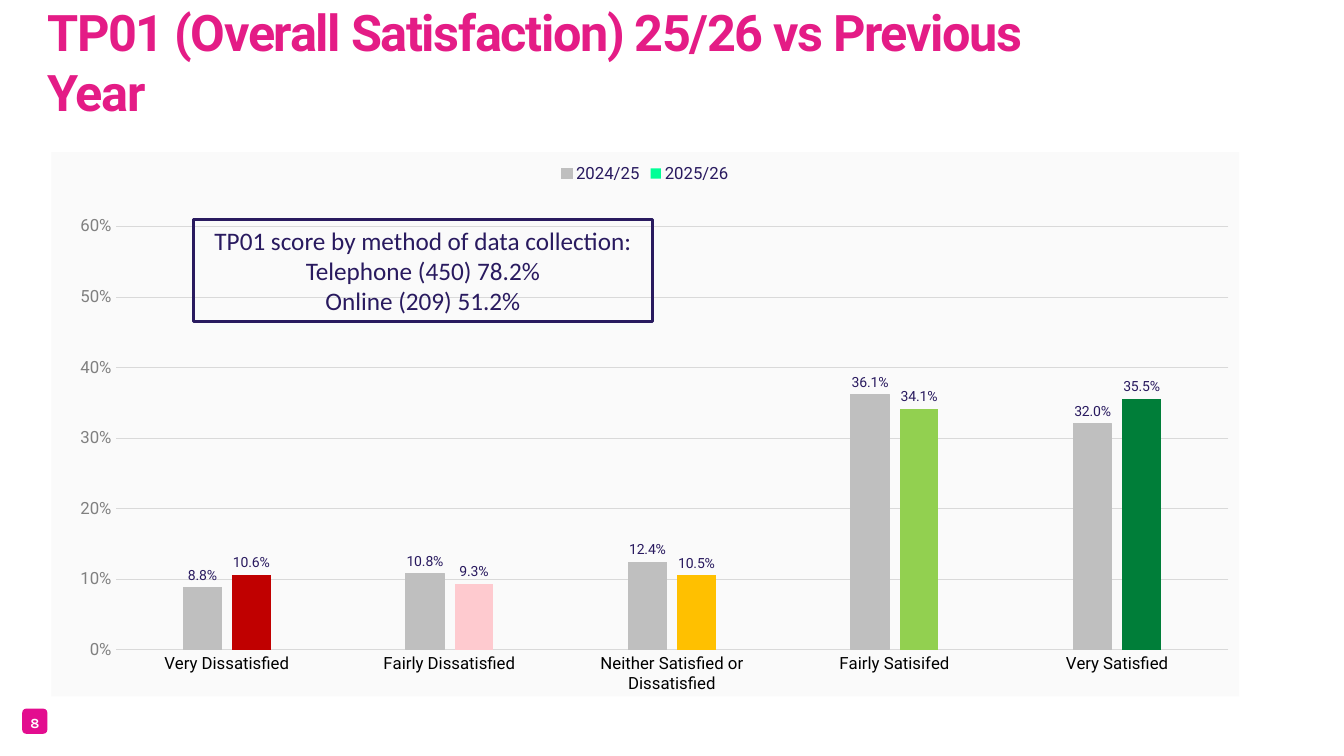
import pptx
import pptx.util
import pptx.chart.data
import pptx.dml.color
import pptx.enum.chart
import pptx.enum.shapes
import pptx.enum.text
import pptx.oxml
import pptx.oxml.ns

PX = 9144
NAVY = "291A5F"
GREY = "BFBFBF"
PINK = "E30D8F"
CATEGORIES = ["Very Dissatisfied", "Fairly Dissatisfied", "Neither Satisfied or Dissatisfied",
              "Fairly Satisifed", "Very Satisfied"]
LAST_YEAR = [0.088, 0.108, 0.124, 0.361, 0.32]
THIS_YEAR = [0.106, 0.093, 0.105, 0.341, 0.355]
ANSWER_COLOURS = ["C00000", "FECACF", "FFC000", "92D050", "007E39"]
PLOT_FRAME = {"x": 0.054, "y": 0.136, "w": 0.937, "h": 0.778}
ALIGN = pptx.enum.text.PP_ALIGN
SHAPES = pptx.enum.shapes.MSO_SHAPE
POSITION = pptx.enum.chart


def px(*lengths):
    return [pptx.util.Emu(length * PX) for length in lengths]


def colour(value):
    return pptx.dml.color.RGBColor.from_string(value)


def paint(fill, value):
    fill.solid()
    fill.fore_color.rgb = colour(value)


def style_font(font, size, value, name="Roboto", bold=False):
    font.size = pptx.util.Pt(size)
    font.name = name
    font.bold = bold
    font.color.rgb = colour(value)


def write(frame, lines, size, value, name, bold=False, align=ALIGN.CENTER):
    frame.word_wrap = True
    spans = []
    for index, line in enumerate(lines):
        para = frame.paragraphs[0] if index == 0 else frame.add_paragraph()
        para.alignment = align
        span = para.add_run()
        span.text = line
        style_font(span.font, size, value, name, bold)
        spans.append(span)
    return spans


def clear_margins(frame):
    frame.margin_left = frame.margin_top = frame.margin_right = frame.margin_bottom = 0


def add_title(page, text):
    title = page.shapes.title
    title.left, title.top, title.width, title.height = px(47, 0, 1045, 121)
    frame = title.text_frame
    clear_margins(frame)
    frame.vertical_anchor = pptx.enum.text.MSO_ANCHOR.BOTTOM
    frame.auto_size = pptx.enum.text.MSO_AUTO_SIZE.SHAPE_TO_FIT_TEXT
    span = write(frame, [text], 36, "E41C86", "Roboto", True, ALIGN.LEFT)[0]
    span.font._element.set("spc", "-100")


def add_page_number(page, number):
    badge = page.shapes.add_shape(SHAPES.ROUNDED_RECTANGLE, *px(22, 703, 25, 25))
    badge.shadow.inherit = False
    paint(badge.fill, PINK)
    badge.line.fill.background()
    box = page.shapes.add_textbox(*px(22, 709, 25, 13))
    clear_margins(box.text_frame)
    write(box.text_frame, [number], 10, "FFFFFF", "Karla", True)
    box.text_frame.paragraphs[0].line_spacing = pptx.util.Pt(12)


def add_callout(page, lines):
    box = page.shapes.add_shape(SHAPES.RECTANGLE, *px(192, 218, 455, 101))
    box.shadow.inherit = False
    box.fill.background()
    box.line.color.rgb = colour(NAVY)
    box.line.width = pptx.util.Pt(2.25)
    write(box.text_frame, lines, 18, NAVY, "Calibri")


def frame_chart(chart):
    namespaces = pptx.oxml.ns.nsdecls("c", "a")
    area = pptx.oxml.parse_xml(
        f'<c:spPr {namespaces}><a:solidFill><a:srgbClr val="FAFAFA"/></a:solidFill>'
        '<a:ln><a:noFill/></a:ln></c:spPr>')
    body = chart._chartSpace.find(pptx.oxml.ns.qn("c:chart"))
    body.addnext(area)
    plot_area = body.find(pptx.oxml.ns.qn("c:plotArea"))
    for layout in plot_area.findall(pptx.oxml.ns.qn("c:layout")):
        plot_area.remove(layout)
    modes = "".join(f'<c:{side}Mode val="edge"/>' for side in "xy")
    sizes = "".join(f'<c:{side} val="{share}"/>' for side, share in PLOT_FRAME.items())
    plot_area.insert(0, pptx.oxml.parse_xml(
        f'<c:layout {namespaces}><c:manualLayout><c:layoutTarget val="inner"/>'
        f'{modes}{sizes}</c:manualLayout></c:layout>'))


def style_axis(axis, value):
    axis.major_tick_mark = axis.minor_tick_mark = POSITION.XL_TICK_MARK.NONE
    axis.format.line.fill.background()
    style_font(axis.tick_labels.font, 12, value)


def style_value_axis(axis):
    style_axis(axis, "808080")
    axis.minimum_scale = 0
    axis.maximum_scale = 0.6
    axis.major_unit = 0.1
    axis.tick_labels.number_format = "0%"
    axis.tick_labels.number_format_is_linked = False
    grid = axis.major_gridlines.format.line
    grid.color.rgb = colour("D9D9D9")
    grid.width = pptx.util.Pt(0.25)


def style_series(series, value):
    paint(series.format.fill, value)
    series.invert_if_negative = False
    labels = series.data_labels
    labels.show_value = True
    labels.number_format = "0.0%"
    labels.number_format_is_linked = False
    labels.position = POSITION.XL_LABEL_POSITION.OUTSIDE_END
    style_font(labels.font, 10, NAVY)


def add_satisfaction_chart(page):
    data = pptx.chart.data.CategoryChartData(number_format="0.0%")
    data.categories = CATEGORIES
    data.add_series("2024/25", LAST_YEAR)
    data.add_series("2025/26", THIS_YEAR)
    chart = page.shapes.add_chart(
        POSITION.XL_CHART_TYPE.COLUMN_CLUSTERED, *px(51, 151, 1178, 540), data).chart
    style_font(chart.font, 10, NAVY)
    chart.has_title = False
    chart.has_legend = True
    chart.legend.position = POSITION.XL_LEGEND_POSITION.TOP
    chart.legend.include_in_layout = False
    style_font(chart.legend.font, 12, NAVY)
    style_axis(chart.category_axis, "000000")
    style_value_axis(chart.value_axis)
    plot = chart.plots[0]
    plot.gap_width = 350
    plot.overlap = -27
    plot.vary_by_categories = False
    last_year, this_year = plot.series
    style_series(last_year, GREY)
    last_year.format.line.color.rgb = colour(GREY)
    last_year.format.line.width = pptx.util.Pt(0.75)
    style_series(this_year, "00FF96")
    for index, value in enumerate(ANSWER_COLOURS):
        paint(this_year.points[index].format.fill, value)
    frame_chart(chart)


def main():
    deck = pptx.Presentation()
    deck.slide_width, deck.slide_height = px(1333, 750)
    page = deck.slides.add_slide(deck.slide_layouts.get_by_name("Title Only"))
    add_page_number(page, "8")
    add_title(page, "TP01 (Overall Satisfaction) 25/26 vs Previous Year")
    add_satisfaction_chart(page)
    add_callout(page, ["TP01 score by method of data collection:",
                       "Telephone (450) 78.2%", "Online (209) 51.2%"])
    deck.save("out.pptx")


if __name__ == "__main__":
    main()
